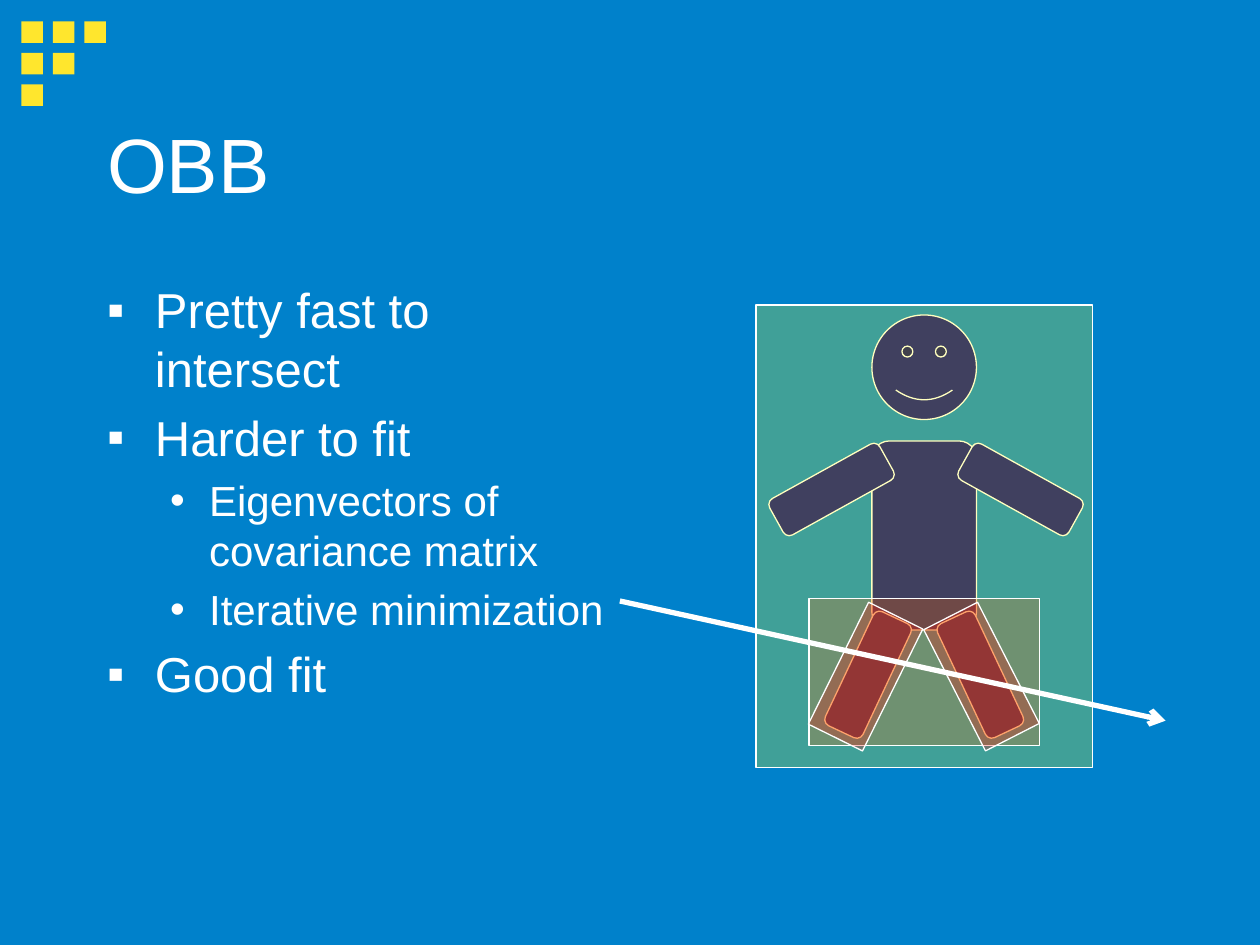
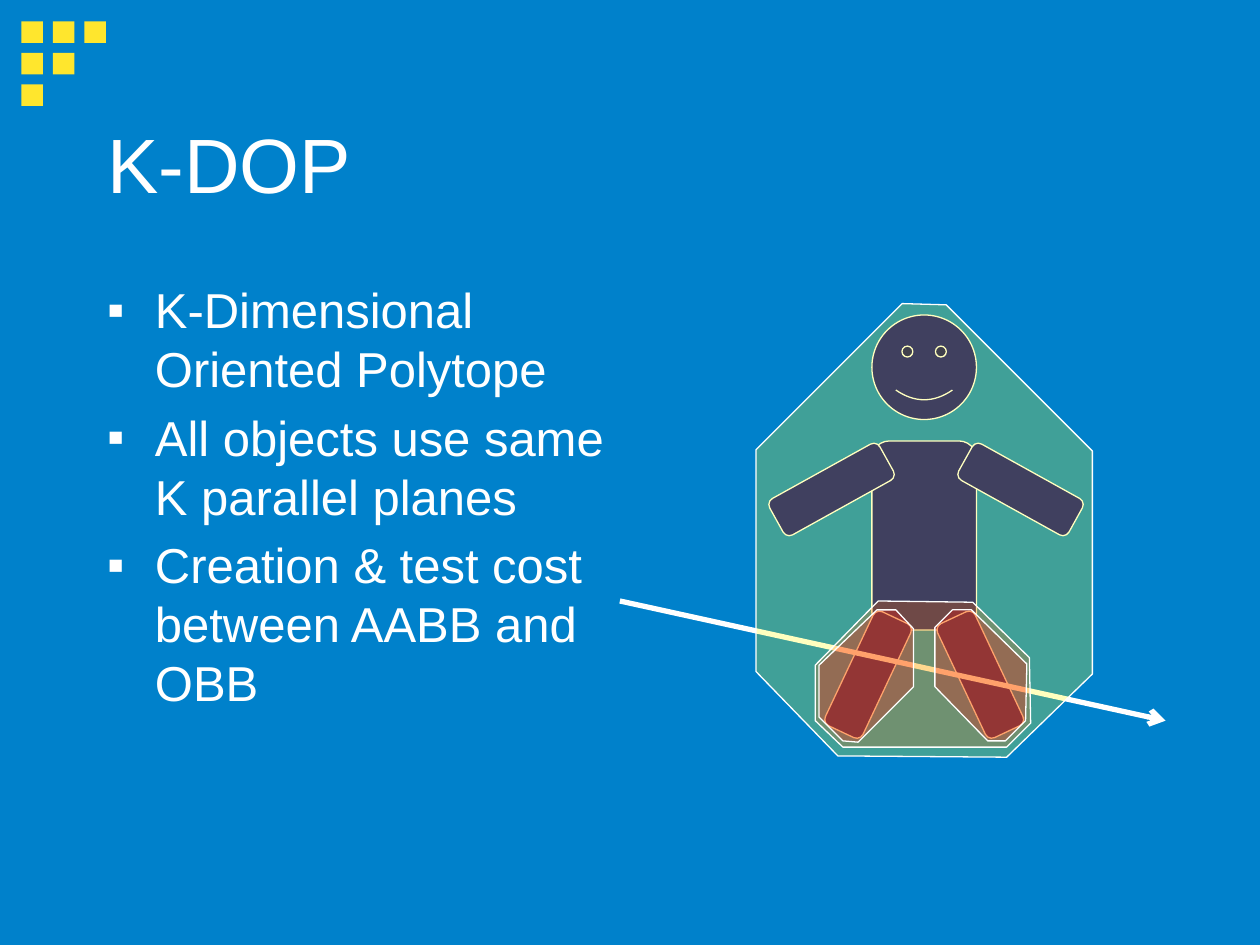
import dataclasses
import itertools

import lxml.etree
import pptx
import pptx.dml.color
import pptx.enum.shapes
import pptx.enum.text
import pptx.oxml.ns
import pptx.util

Inches = pptx.util.Inches
Shape = pptx.enum.shapes.MSO_SHAPE


@dataclasses.dataclass(frozen=True)
class Theme:
    background: str = "0081CB"
    accent: str = "FFE62D"
    ink: str = "FFFFFF"
    figure: str = "000080"
    whole: str = "FFFF00"
    legs: str = "FF6600"
    leg: str = "FF0000"
    font: str = "Arial"
    title_size: int = 44
    level_sizes: tuple = (28, 24)
    outline: float = 0.75
    ray: float = 3
    bound_alpha: int = 25


THEME = Theme()

TITLE_AREA = (0.75, 0.67, 8.5, 1.25)
LIST_AREA = (0.75, 2.17, 4.17, 4.5)
BULLETS = (("▪", 0.38, 0.38), ("•", 0.81, 0.31))

OBB_POINTS = (
    (0, "Pretty fast to intersect"),
    (0, "Harder to fit"),
    (1, "Eigenvectors of covariance matrix"),
    (1, "Iterative minimization"),
    (0, "Good fit"),
)
KDOP_POINTS = (
    (0, "K-Dimensional Oriented Polytope"),
    (0, "All objects use same K parallel planes"),
    (0, "Creation & test cost between AABB and OBB"),
)

FIGURE = (
    (Shape.SMILEY_FACE, (6.92, 2.5, 0.83, 0.83), 0),
    (Shape.ROUNDED_RECTANGLE, (6.92, 3.5, 0.83, 1.5), 0),
    (Shape.ROUNDED_RECTANGLE, (6.1, 3.72, 1, 0.33), -29),
    (Shape.ROUNDED_RECTANGLE, (7.6, 3.72, 1, 0.33), 29),
    (Shape.ROUNDED_RECTANGLE, (6.39, 5.19, 1, 0.33), -64.8),
    (Shape.ROUNDED_RECTANGLE, (7.28, 5.19, 1, 0.33), 64.8),
)
RAY = (4.92, 4.77, 9.25, 5.72)

BOXES = (
    (THEME.whole, (6, 2.42, 2.67, 3.67), 0),
    (THEME.legs, (6.42, 4.75, 1.83, 1.17), 0),
    (THEME.leg, (6.63, 4.83, 0.48, 1.08), 26.3),
    (THEME.leg, (7.55, 4.83, 0.48, 1.08), -27),
)
POLYTOPES = (
    (THEME.whole, ((7.16, 2.41), (7.51, 2.42), (8.67, 3.58), (8.67, 5.35),
                   (7.99, 6.01), (6.65, 6), (6, 5.33), (6, 3.57))),
    (THEME.legs, ((6.97, 4.77), (7.72, 4.78), (8.17, 5.22), (8.18, 5.74),
                  (7.99, 5.93), (6.69, 5.93), (6.47, 5.72), (6.47, 5.28))),
    (THEME.leg, ((6.96, 4.84), (7.11, 4.84), (7.25, 4.99), (7.25, 5.45),
                 (6.81, 5.89), (6.69, 5.88), (6.5, 5.69), (6.5, 5.28))),
    (THEME.leg, ((7.56, 4.84), (7.71, 4.84), (8.15, 5.27), (8.14, 5.72),
                 (7.98, 5.88), (7.84, 5.88), (7.42, 5.45), (7.42, 4.98))),
)


def rgb(color):
    return pptx.dml.color.RGBColor.from_string(color)


def add_xml(parent, tag, **attributes):
    return lxml.etree.SubElement(
        parent, pptx.oxml.ns.qn(tag), {key: str(value) for key, value in attributes.items()})


def paint(shape, color, outline=THEME.ink, alpha=None):
    shape.shadow.inherit = False
    shape.fill.solid()
    shape.fill.fore_color.rgb = rgb(color)
    if alpha:
        tint = shape.element.spPr.find(".//" + pptx.oxml.ns.qn("a:srgbClr"))
        add_xml(tint, "a:alpha", val=alpha * 1000)
    if outline:
        shape.line.color.rgb = rgb(outline)
        shape.line.width = pptx.util.Pt(THEME.outline)
    else:
        shape.line.fill.background()


def add_part(slide, kind, area, color, rotation=0, **look):
    part = slide.shapes.add_shape(kind, *map(Inches, area))
    part.rotation = rotation
    paint(part, color, **look)
    return part


def write(paragraph, text, size, color=THEME.ink, level=0, bullet=None, space_before=0):
    paragraph.level = level
    paragraph.alignment = pptx.enum.text.PP_ALIGN.LEFT
    paragraph.space_before = pptx.util.Pt(space_before)
    if bullet:
        mark, left, hanging = bullet
        properties = paragraph._p.get_or_add_pPr()
        properties.set("marL", str(Inches(left)))
        properties.set("indent", str(-Inches(hanging)))
        add_xml(properties, "a:buFont", typeface=THEME.font)
        add_xml(properties, "a:buChar", char=mark)
    run = paragraph.add_run()
    run.text = text
    run.font.name = THEME.font
    run.font.size = pptx.util.Pt(size)
    run.font.color.rgb = rgb(color)


def place(placeholder, area, anchor):
    placeholder.left, placeholder.top, placeholder.width, placeholder.height = map(Inches, area)
    frame = placeholder.text_frame
    frame.word_wrap = True
    frame.auto_size = pptx.enum.text.MSO_AUTO_SIZE.NONE
    frame.vertical_anchor = anchor
    return frame


def add_topic(deck, title, points):
    slide = deck.slides.add_slide(deck.slide_layouts[1])
    heading = place(slide.shapes.title, TITLE_AREA, pptx.enum.text.MSO_ANCHOR.MIDDLE)
    write(heading.paragraphs[0], title, THEME.title_size)
    listing = place(slide.placeholders[1], LIST_AREA, pptx.enum.text.MSO_ANCHOR.TOP)
    for index, (level, text) in enumerate(points):
        paragraph = listing.add_paragraph() if index else listing.paragraphs[0]
        size = THEME.level_sizes[level]
        write(paragraph, text, size, level=level, bullet=BULLETS[level],
              space_before=0.2 * size if index else 0)
    for kind, area, rotation in FIGURE:
        add_part(slide, kind, area, THEME.figure, rotation)
    return slide


def add_ray(slide):
    ray = slide.shapes.add_connector(
        pptx.enum.shapes.MSO_CONNECTOR.STRAIGHT, *map(Inches, RAY))
    ray.line.color.rgb = rgb(THEME.ink)
    ray.line.width = pptx.util.Pt(THEME.ray)
    add_xml(ray.line._get_or_add_ln(), "a:tailEnd", type="arrow")
    add_xml(ray.element.spPr, "a:effectLst")


def add_boxes(slide):
    for color, area, rotation in BOXES:
        add_part(slide, Shape.RECTANGLE, area, color, rotation, alpha=THEME.bound_alpha)


def add_polytopes(slide):
    for color, corners in POLYTOPES:
        start, *others = [(Inches(x), Inches(y)) for x, y in corners]
        outline = slide.shapes.build_freeform(*start)
        outline.add_line_segments(others, close=True)
        paint(outline.convert_to_shape(), color, alpha=THEME.bound_alpha)


def decorate_master(deck, slide):
    master = deck.slide_master
    master.background.fill.solid()
    master.background.fill.fore_color.rgb = rgb(THEME.background)
    cells = [(row, column) for row, column in itertools.product(range(3), repeat=2)
             if row + column < 3]
    for number, (row, column) in enumerate(cells, start=101):
        area = (0.17 + 0.25 * column, 0.17 + 0.25 * row, 0.17, 0.17)
        square = add_part(slide, Shape.RECTANGLE, area, THEME.accent, outline=None)
        square.element.nvSpPr.cNvPr.set("id", str(number))
        master.shapes.element.append(square.element)


def main():
    deck = pptx.Presentation()
    deck.slide_width, deck.slide_height = Inches(10), Inches(7.5)

    obb = add_topic(deck, "OBB", OBB_POINTS)
    add_boxes(obb)
    add_ray(obb)

    kdop = add_topic(deck, "K-DOP", KDOP_POINTS)
    add_ray(kdop)
    add_polytopes(kdop)

    decorate_master(deck, obb)
    deck.save("out.pptx")


if __name__ == "__main__":
    main()
